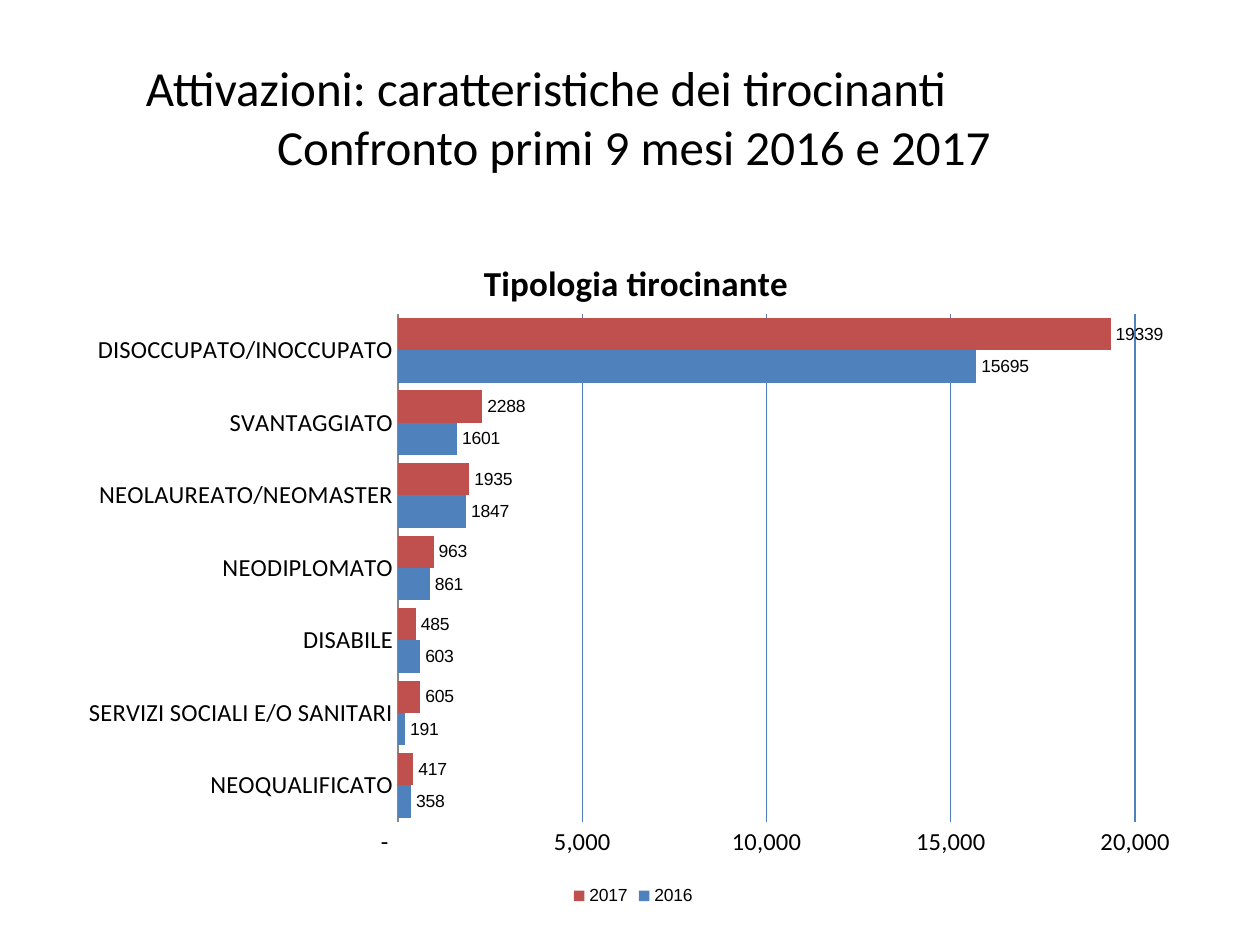
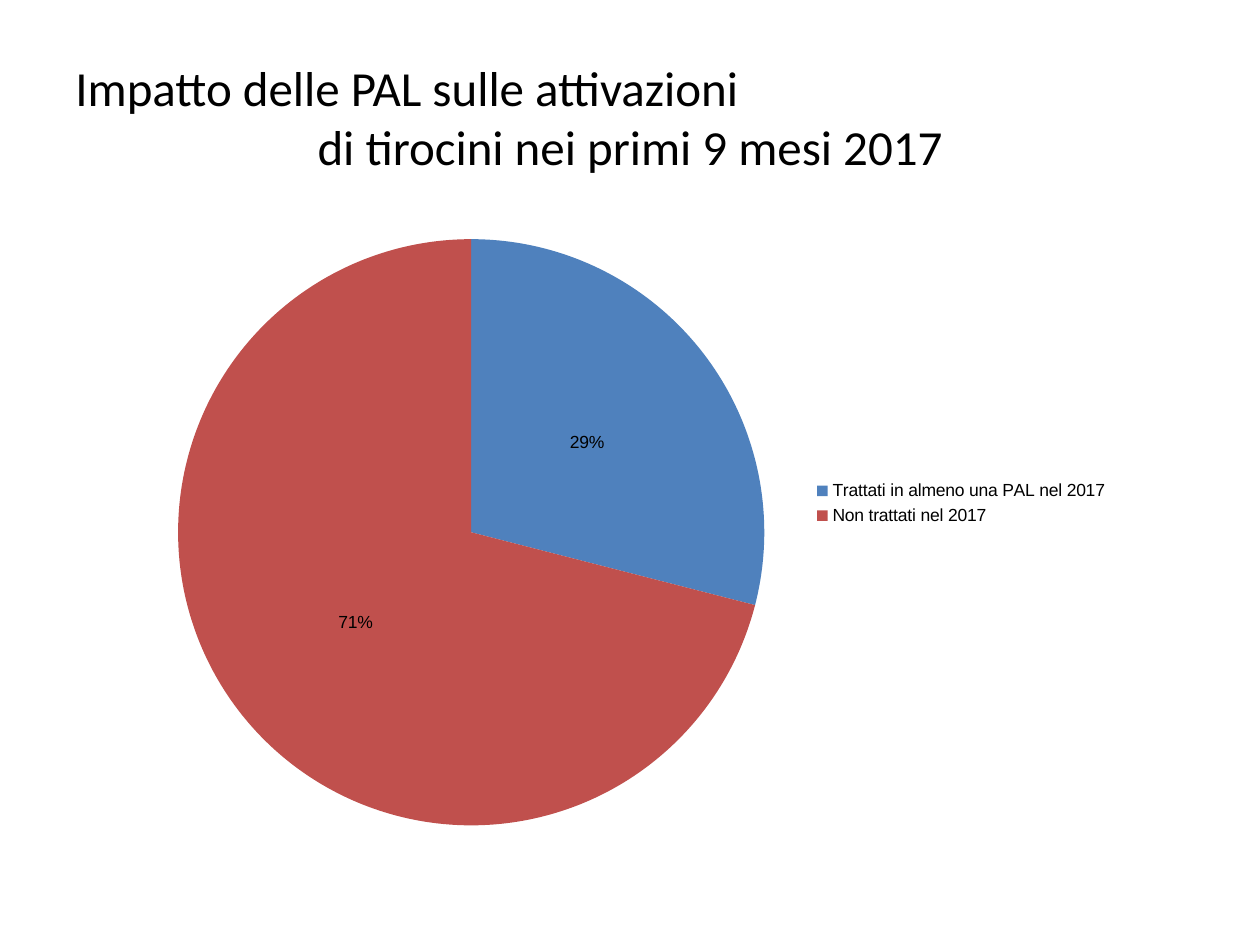
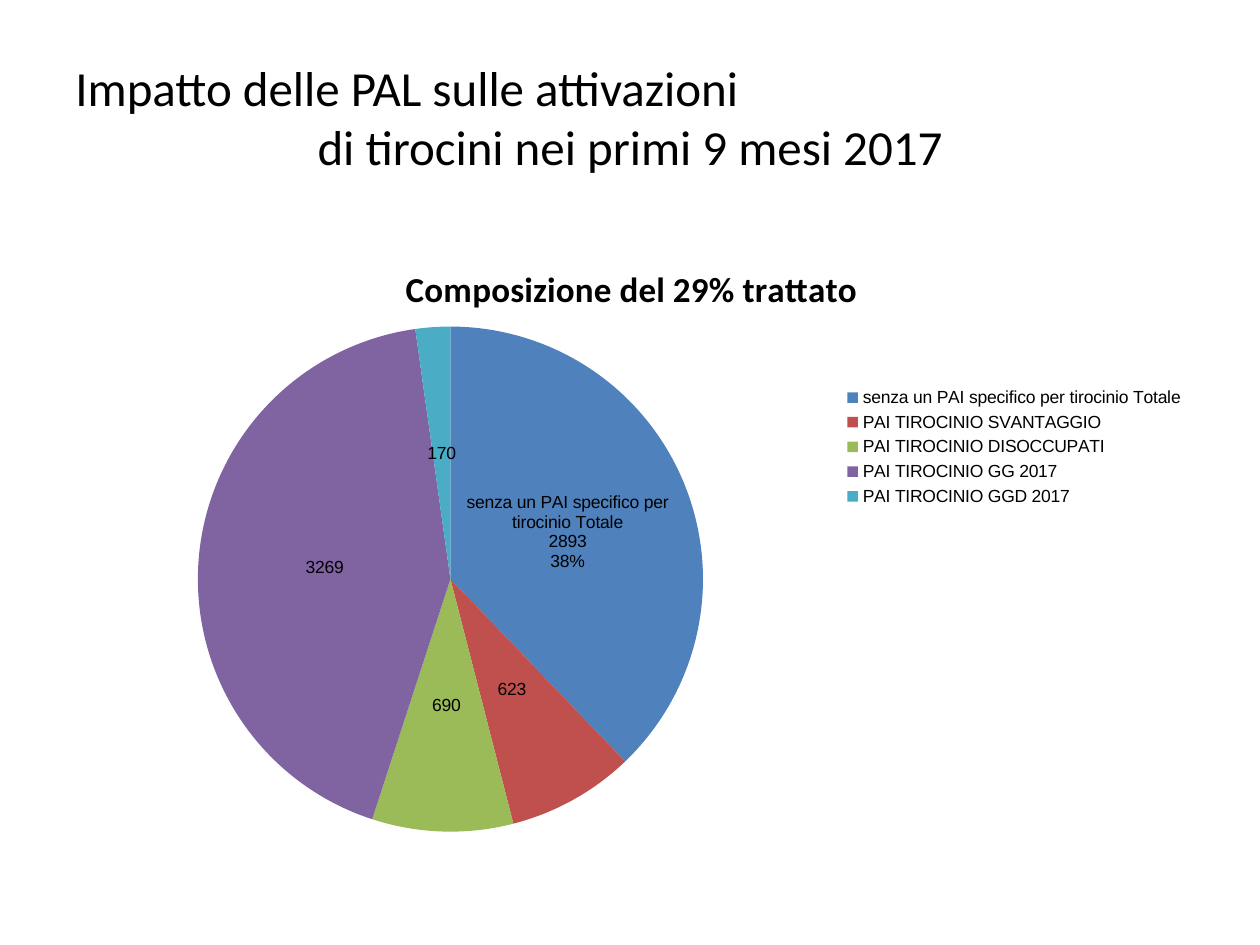
from lxml import etree
from pptx import Presentation
from pptx.chart.data import CategoryChartData as Data
from pptx.dml.color import RGBColor as RGB
from pptx.enum.chart import XL_CHART_TYPE as Kind
from pptx.enum.chart import XL_LABEL_POSITION as Spot
from pptx.enum.chart import XL_LEGEND_POSITION as Side
from pptx.enum.chart import XL_TICK_MARK as Tick
from pptx.enum.text import MSO_ANCHOR as Anchor
from pptx.enum.text import PP_ALIGN as Align
from pptx.oxml.ns import qn
from pptx.util import Pt

BLACK = RGB(0x00, 0x00, 0x00)
GREY = RGB(0x87, 0x87, 0x87)
BLUE = RGB(0x4F, 0x81, 0xBD)
RED = RGB(0xC0, 0x50, 0x4D)
GREEN = RGB(0x9B, 0xBB, 0x59)
PURPLE = RGB(0x80, 0x64, 0xA2)
TEAL = RGB(0x4B, 0xAC, 0xC6)
HUES = [BLUE, RED, GREEN, PURPLE, TEAL]

HEAD = "Calibri"
BODY = "Arial"
COUNT = r"_-* #,##0_-;\-* #,##0_-;_-* \-??_-;_-@_-"


def style(font, name, size, bold=False):
    font.name, font.size, font.bold = name, Pt(size), bold
    font.color.rgb = BLACK


def place(part, index, **box):
    """Fix a chart part at fractions of the chart area."""
    for old in part.findall(qn("c:layout")):
        part.remove(old)
    layout = etree.Element(qn("c:layout"))
    part.insert(index, layout)
    manual = etree.SubElement(layout, qn("c:manualLayout"))
    items = {"xMode": "edge", "yMode": "edge", **box}
    if "w" in box:
        items = {"layoutTarget": "inner", **items}
    for tag, value in items.items():
        etree.SubElement(manual, qn(f"c:{tag}")).set("val", str(value))


class Deck:
    def __init__(self):
        self.prs = Presentation()
        self.prs.slide_width, self.prs.slide_height = Pt(720), Pt(540)
        self.slide = None

    def page(self, left, width, *lines):
        """Start a slide whose title steps from left to centre."""
        self.slide = self.prs.slides.add_slide(self.prs.slide_layouts[6])
        box = self.slide.shapes.add_textbox(Pt(left), Pt(21.6), Pt(width), Pt(90))
        frame = box.text_frame
        frame.word_wrap = True
        frame.vertical_anchor = Anchor.MIDDLE
        frame.text = "\n".join(lines)
        for para, align in zip(frame.paragraphs, (Align.LEFT, Align.CENTER)):
            para.alignment = align
            style(para.font, HEAD, 28)

    def chart(self, kind, box, cats, series, plot, key, side, title=None):
        """Add a chart; plot is x, y, w, h and key is the legend's x, y."""
        data = Data()
        data.categories = cats
        for name, values in series.items():
            data.add_series(name, values)
        spots = map(Pt, box)
        chart = self.slide.shapes.add_chart(kind, *spots, data).chart
        style(chart.font, BODY, 10)
        chart.has_title = title is not None
        if title:
            text, x, y = title
            chart.chart_title.text_frame.text = text
            style(chart.chart_title.text_frame.paragraphs[0].font, HEAD, 20, True)
            place(chart.element.xpath("c:chart/c:title")[0], 1, x=x, y=y)
        chart.has_legend = True
        chart.legend.position = side
        chart.legend.include_in_layout = False
        place(chart.element.xpath("c:chart/c:legend")[0], 1, **dict(zip("xy", key)))
        area = chart.element.xpath("c:chart/c:plotArea")[0]
        place(area, 0, **dict(zip("xywh", plot)))
        chart.plots[0].has_data_labels = True
        return chart

    def bars(self, top, step, **parts):
        chart = self.chart(Kind.BAR_CLUSTERED, side=Side.BOTTOM, **parts)
        plot = chart.plots[0]
        plot.gap_width, plot.overlap = 24, 0
        plot.vary_by_categories = False
        plot.data_labels.show_value = True
        plot.data_labels.position = Spot.OUTSIDE_END
        for row, hue in zip(plot.series, HUES):
            row.format.fill.solid()
            row.format.fill.fore_color.rgb = hue
        cat, val = chart.category_axis, chart.value_axis
        for axis in (cat, val):
            axis.major_tick_mark = axis.minor_tick_mark = Tick.NONE
            style(axis.tick_labels.font, HEAD, 14)
        cat.format.line.color.rgb = GREY
        cat.format.line.width = Pt(0.75)
        val.format.line.fill.background()
        val.minimum_scale, val.maximum_scale, val.major_unit = 0, top, step
        val.tick_labels.number_format = COUNT
        val.tick_labels.number_format_is_linked = False
        val.has_major_gridlines = True
        val.major_gridlines.format.line.color.rgb = BLUE
        val.major_gridlines.format.line.width = Pt(0.75)

    def pie(self, values, share=False, full=None, **parts):
        """Add a pie; share labels percents, full is the slice with all labels."""
        chart = self.chart(Kind.PIE, series={"Series 1": values},
                           side=Side.RIGHT, **parts)
        plot = chart.plots[0]
        plot.vary_by_categories = True
        row = plot.series[0]
        for index, hue in enumerate(HUES[:len(values)]):
            fill = row.points[index].format.fill
            fill.solid()
            fill.fore_color.rgb = hue
        labels = row.data_labels
        labels.show_value, labels.show_percentage = not share, share
        labels.position = Spot.CENTER
        if share:
            labels.number_format = "0%"
            labels.number_format_is_linked = False
        if full is not None:
            row.points[full].data_label.position = Spot.CENTER
            label = chart.element.xpath(".//c:dLbl")[0]
            for tag in ("showVal", "showCatName", "showPercent"):
                label.find(qn(f"c:{tag}")).set("val", "1")
            gap = etree.Element(qn("c:separator"))
            gap.text = "\n"
            label.find(qn("c:showBubbleSize")).addnext(gap)


def main():
    deck = Deck()
    deck.page(76.32, 571.68, "Attivazioni: caratteristiche dei tirocinanti",
              "Confronto primi 9 mesi 2016 e 2017")
    deck.bars(
        20000, 5000, box=(39.6, 123.84, 648, 397.44),
        cats=["NEOQUALIFICATO", "SERVIZI SOCIALI E/O SANITARI", "DISABILE",
              "NEODIPLOMATO", "NEOLAUREATO/NEOMASTER", "SVANTAGGIATO",
              "DISOCCUPATO/INOCCUPATO"],
        series={"2016": [358, 191, 603, 861, 1847, 1601, 15695],
                "2017": [417, 605, 485, 963, 1935, 2288, 19339]},
        plot=(0.29, 0.14, 0.65, 0.73), key=(0.44, 0.96),
        title=("Tipologia tirocinante", 0.36, 0.05))

    impact = ("Impatto delle PAL sulle attivazioni",
              "di tirocini nei primi 9 mesi 2017")
    deck.page(36, 648, *impact)
    deck.pie(
        [29, 71], share=True, box=(36, 126, 648, 356.4),
        cats=["Trattati in almeno una PAL nel 2017", "Non trattati nel 2017"],
        plot=(0.1, 0.03, 0.52, 0.94), key=(0.66, 0.41))

    deck.page(36, 648, *impact)
    deck.pie(
        [2893, 623, 690, 3269, 170], full=0, box=(33.84, 129.6, 648, 356.4),
        cats=["senza un PAI specifico per tirocinio Totale",
              "PAI TIROCINIO SVANTAGGIO", "PAI TIROCINIO DISOCCUPATI",
              "PAI TIROCINIO GG 2017", "PAI TIROCINIO GGD 2017"],
        plot=(0.12, 0.16, 0.45, 0.81), key=(0.69, 0.25),
        title=("Composizione del 29% trattato", 0.3, 0.05))
    deck.prs.save("out.pptx")


if __name__ == "__main__":
    main()
